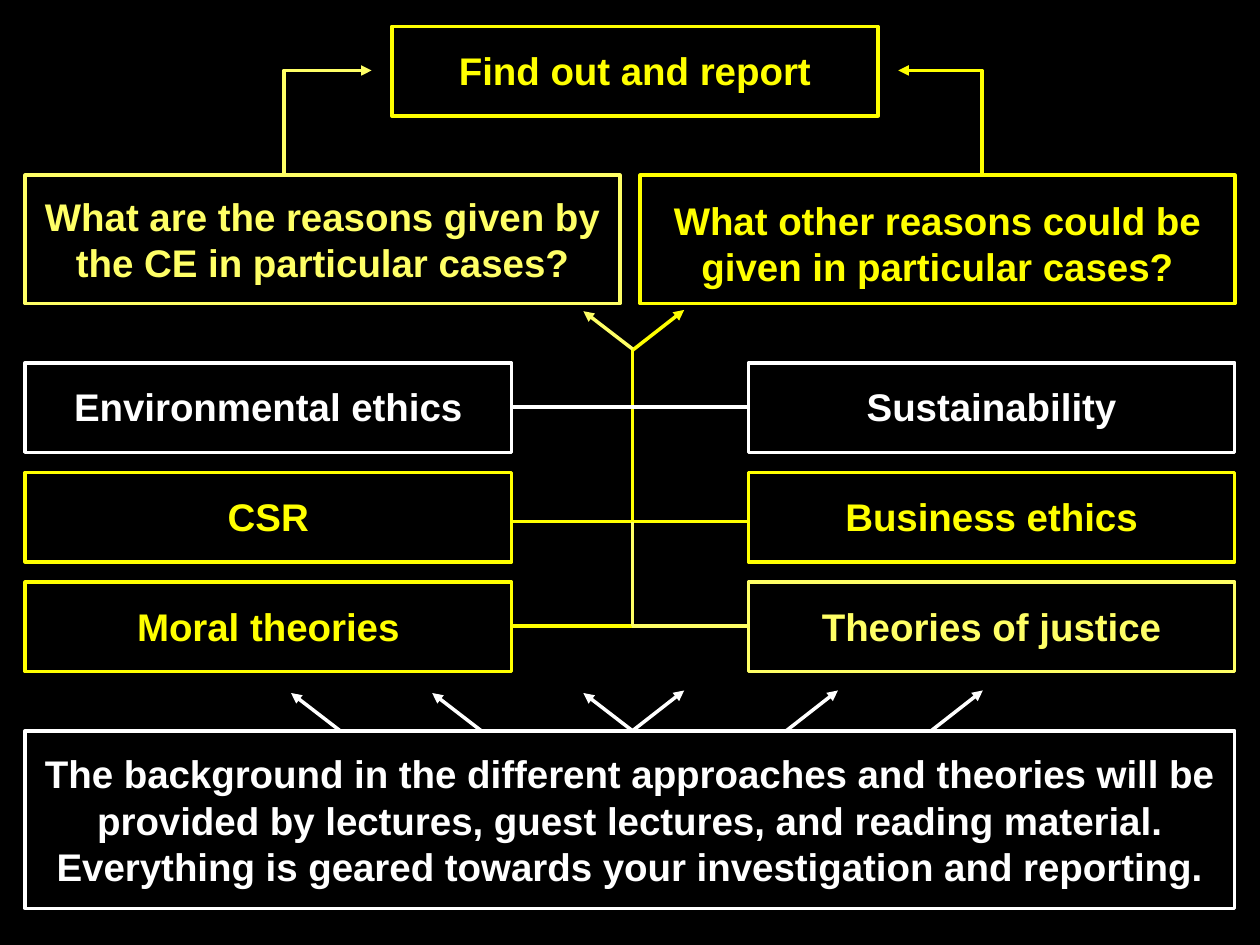
from dataclasses import dataclass

from lxml.etree import SubElement
from pptx import Presentation
from pptx.dml.color import RGBColor
from pptx.enum.shapes import MSO_CONNECTOR, MSO_SHAPE
from pptx.enum.text import MSO_ANCHOR, PP_ALIGN
from pptx.oxml.ns import qn
from pptx.shapes.connector import Connector
from pptx.slide import Slide
from pptx.util import Inches, Pt


@dataclass(frozen=True)
class Theme:
    background: RGBColor = RGBColor(0, 0, 0)
    yellow: RGBColor = RGBColor(0xFF, 0xFF, 0)
    pale: RGBColor = RGBColor(0xFF, 0xFF, 0x66)
    white: RGBColor = RGBColor(0xFF, 0xFF, 0xFF)
    font: str = "Arial"
    size: float = 22
    line: float = 2
    spine: float = 2.25


@dataclass(frozen=True)
class Box:
    text: str
    left: float
    top: float
    width: float
    height: float
    color: RGBColor
    inset_top: float = 0.05


@dataclass(frozen=True)
class Link:
    start: tuple[float, float]
    end: tuple[float, float]
    color: RGBColor
    arrow: bool = False
    weight: float = 2
    bend: float | None = None


@dataclass(frozen=True)
class Row:
    top: float
    rung: float
    left_topic: str
    left_color: RGBColor
    right_topic: str
    right_color: RGBColor


THEME = Theme()
LEFT, RIGHT = 0.2, 9.8
TOPIC_WIDTH, TOPIC_HEIGHT = 3.86, 0.71
QUESTION_TOP, QUESTION_WIDTH, QUESTION_HEIGHT = 1.39, 4.72, 1.02
SPINE = 5.02

ROWS = [
    Row(2.88, 3.23, "Environmental ethics", THEME.white, "Sustainability", THEME.white),
    Row(3.75, 4.14, "CSR", THEME.yellow, "Business ethics", THEME.yellow),
    Row(4.62, 4.97, "Moral theories", THEME.yellow, "Theories of justice", THEME.pale),
]
BOXES = [
    Box("What other reasons could be given in particular cases?", RIGHT - QUESTION_WIDTH,
        QUESTION_TOP, QUESTION_WIDTH, QUESTION_HEIGHT, THEME.yellow, 0.11),
    Box("What are the reasons given by the CE in particular cases?", LEFT,
        QUESTION_TOP, QUESTION_WIDTH, QUESTION_HEIGHT, THEME.pale),
    Box("Find out and report", 3.11, 0.21, TOPIC_WIDTH, TOPIC_HEIGHT, THEME.yellow, 0.03),
]
BACKGROUND_BOX = Box(
    "The background in the different approaches and theories will be provided by "
    "lectures, guest lectures, and reading material.\n"
    "Everything is geared towards your investigation and reporting.",
    LEFT, 5.8, RIGHT - LEFT, 1.41, THEME.white)
ELBOWS = [
    Link((8.46, QUESTION_TOP), (7.13, 0.56), THEME.yellow, True, bend=0.5),
    Link((4.29, QUESTION_TOP), (2.95, 0.56), THEME.pale, True, bend=1.52),
]


def draw_box(slide: Slide, box: Box) -> None:
    shape = slide.shapes.add_shape(
        MSO_SHAPE.RECTANGLE, Inches(box.left), Inches(box.top),
        Inches(box.width), Inches(box.height))
    shape.shadow.inherit = False
    shape.fill.background()
    shape.line.color.rgb = box.color
    shape.line.width = Pt(THEME.line)
    frame = shape.text_frame
    frame.word_wrap = True
    frame.vertical_anchor = MSO_ANCHOR.MIDDLE
    frame.margin_top = Inches(box.inset_top)
    frame.text = box.text
    for paragraph in frame.paragraphs:
        paragraph.alignment = PP_ALIGN.CENTER
        for run in paragraph.runs:
            run.font.name = THEME.font
            run.font.size = Pt(THEME.size)
            run.font.bold = True
            run.font.color.rgb = box.color


def set_bend(connector: Connector, bend: float) -> None:
    geometry = connector._element.spPr.find(qn("a:prstGeom"))
    guides = geometry.find(qn("a:avLst"))
    if guides is None:
        guides = SubElement(geometry, qn("a:avLst"))
    SubElement(guides, qn("a:gd"), name="adj1", fmla=f"val {round(bend * 100000)}")


def draw_link(slide: Slide, link: Link) -> None:
    kind = MSO_CONNECTOR.STRAIGHT if link.bend is None else MSO_CONNECTOR.ELBOW
    connector = slide.shapes.add_connector(
        kind, *(Inches(value) for value in (*link.start, *link.end)))
    connector.line.color.rgb = link.color
    connector.line.width = Pt(link.weight)
    if link.bend is not None:
        set_bend(connector, link.bend)
    if link.arrow:
        SubElement(connector.line._get_or_add_ln(), qn("a:tailEnd"), type="triangle")
    SubElement(connector._element.spPr, qn("a:effectLst"))


def rising_arrow(x: float, y: float, direction: int, color: RGBColor) -> Link:
    run, rise = (0.41, 0.32) if direction > 0 else (0.39, 0.3)
    return Link((x, y), (x + direction * run, y - rise), color, True)


def draw_row(slide: Slide, row: Row) -> None:
    right_edge = RIGHT - TOPIC_WIDTH
    draw_box(slide, Box(row.left_topic, LEFT, row.top, TOPIC_WIDTH, TOPIC_HEIGHT,
                        row.left_color, 0.03))
    draw_box(slide, Box(row.right_topic, right_edge, row.top, TOPIC_WIDTH, TOPIC_HEIGHT,
                        row.right_color, 0.03))
    draw_link(slide, Link((SPINE, row.rung), (LEFT + TOPIC_WIDTH, row.rung), row.left_color))
    draw_link(slide, Link((right_edge, row.rung), (SPINE, row.rung), row.right_color))


def main() -> None:
    """Build the slide that maps ethical theories to the reporting task."""
    deck = Presentation()
    deck.slide_width, deck.slide_height = Inches(10), Inches(7.5)
    slide = deck.slides.add_slide(deck.slide_layouts[6])
    slide.background.fill.solid()
    slide.background.fill.fore_color.rgb = THEME.background

    for box in BOXES:
        draw_box(slide, box)
    for elbow in ELBOWS:
        draw_link(slide, elbow)
    draw_link(slide, Link((SPINE, 2.77), (SPINE, 4.97), THEME.yellow, weight=THEME.spine))
    for row in ROWS:
        draw_row(slide, row)
    draw_link(slide, Link((SPINE, 4.14), (SPINE, 4.97), THEME.pale, weight=THEME.spine))
    draw_link(slide, rising_arrow(SPINE, 2.78, 1, THEME.yellow))
    draw_link(slide, rising_arrow(SPINE, 2.77, -1, THEME.pale))

    draw_box(slide, BACKGROUND_BOX)
    for x in (SPINE, 6.24, 7.39):
        draw_link(slide, rising_arrow(x, BACKGROUND_BOX.top, 1, THEME.white))
    for x in (SPINE, 3.82, 2.7):
        draw_link(slide, rising_arrow(x, BACKGROUND_BOX.top, -1, THEME.white))
    deck.save("out.pptx")


if __name__ == "__main__":
    main()
